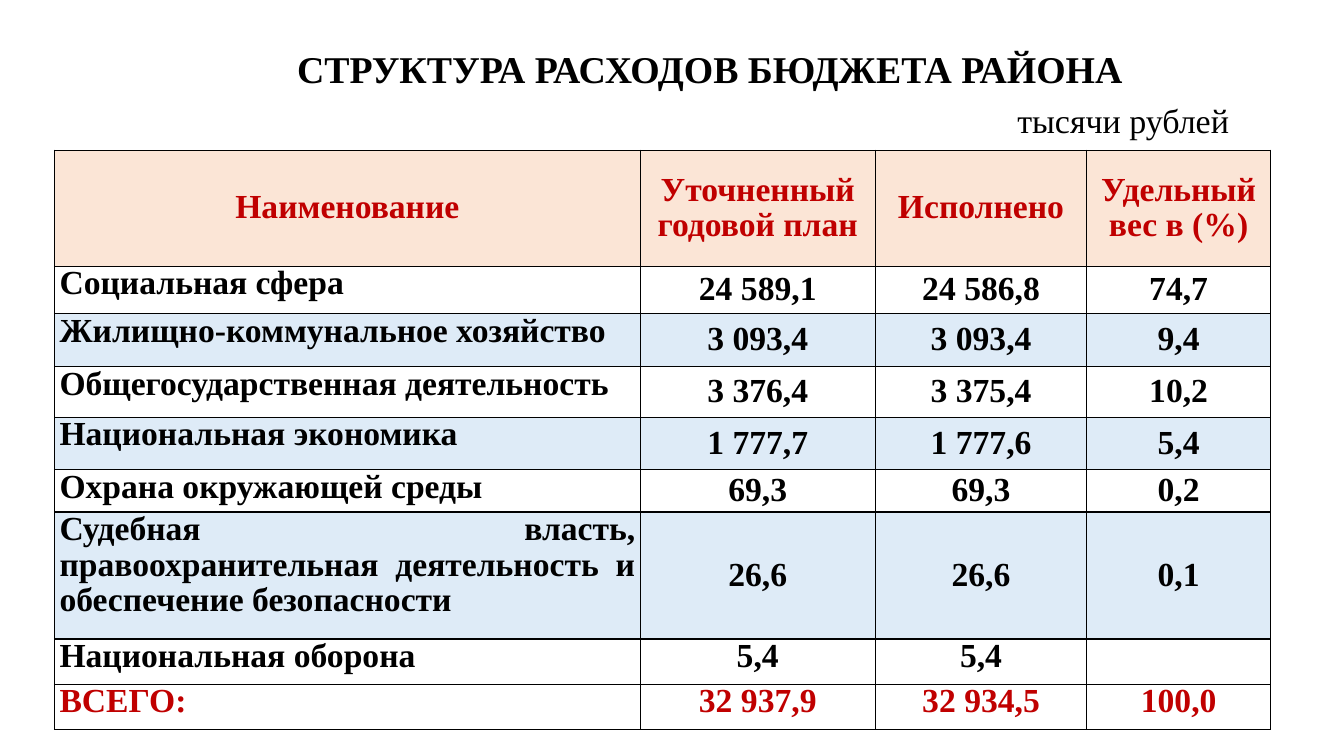
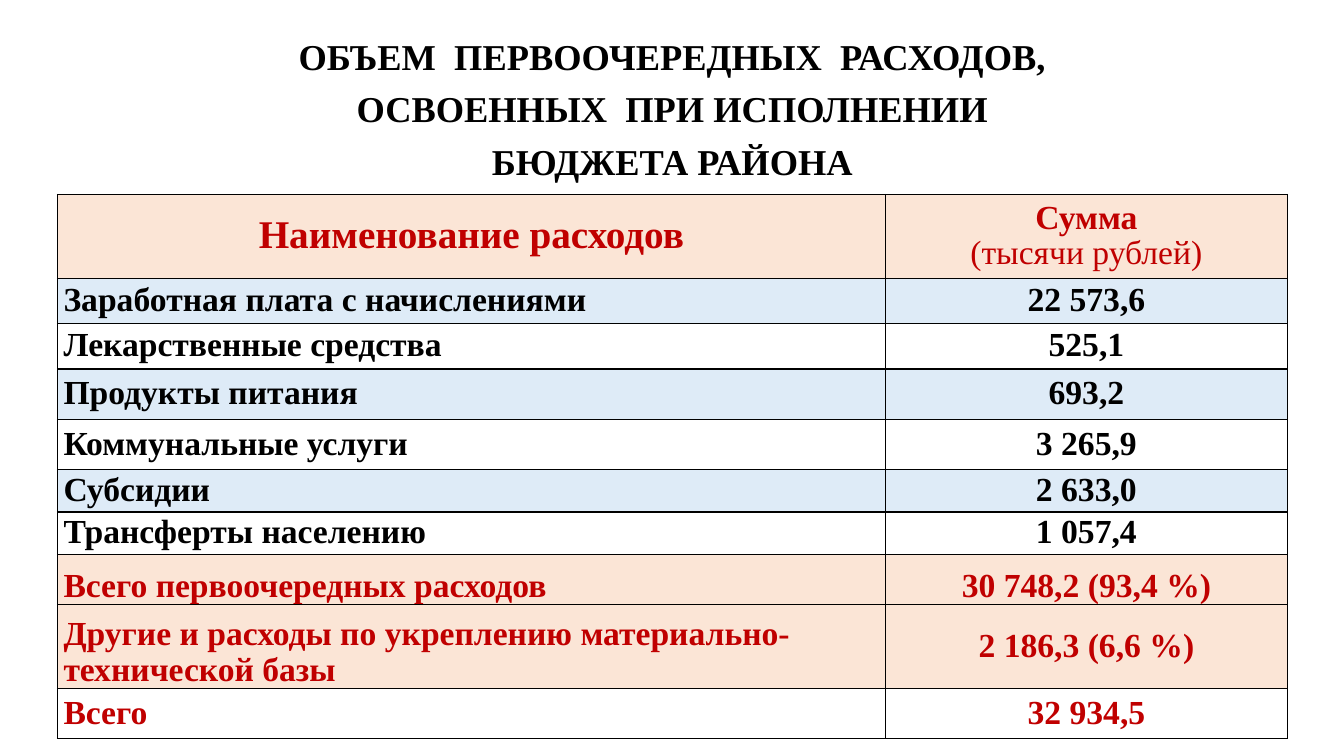
"""Build two slides on the spending of a district budget."""
from lxml.etree import SubElement
from pptx import Presentation
from pptx.dml.color import RGBColor
from pptx.enum.text import MSO_ANCHOR as Anchor, MSO_AUTO_SIZE as AutoSize, PP_ALIGN as Align
from pptx.oxml.ns import qn
from pptx.util import Inches, Pt

FONT = "Times New Roman"
BLACK = RGBColor(0x00, 0x00, 0x00)
RED = RGBColor(0xC0, 0x00, 0x00)
WHITE = RGBColor(0xFF, 0xFF, 0xFF)
PEACH = RGBColor(0xFB, 0xE5, 0xD6)
BLUE = RGBColor(0xDE, 0xEB, 0xF7)
TITLE_ONLY = 5
TOP, MIDDLE, BOTTOM = Anchor.TOP, Anchor.MIDDLE, Anchor.BOTTOM

STRUCTURE_HEADER = ["Наименование", "Уточненный годовой план", "Исполнено", "Удельный вес в (%)"]
STRUCTURE_ROWS = [
    (0.47, ["Социальная сфера", "24 589,1", "24 586,8", "74,7"]),
    (0.53, ["Жилищно-коммунальное хозяйство", "3 093,4", "3 093,4", "9,4"]),
    (0.5, ["Общегосударственная деятельность", "3 376,4", "3 375,4", "10,2"]),
    (0.52, ["Национальная экономика", "1 777,7", "1 777,6", "5,4"]),
    (0.42, ["Охрана окружающей среды", "69,3", "69,3", "0,2"]),
    (1.26, ["Судебная власть, правоохранительная деятельность и обеспечение безопасности",
            "26,6", "26,6", "0,1"]),
]
DEFENCE = ["Национальная оборона", "5,4", "5,4", ""]
STRUCTURE_TOTAL = ["ВСЕГО:", "32 937,9", "32 934,5", "100,0"]

PRIORITY_ROWS = [
    (0.45, ["Заработная плата с начислениями", "22 573,6"]),
    (0.45, ["Лекарственные средства", "525,1"]),
    (0.5, ["Продукты питания", "693,2"]),
    (0.5, ["Коммунальные услуги", "3 265,9"]),
    (0.42, ["Субсидии", "2 633,0"]),
    (0.42, ["Трансферты населению", "1 057,4"]),
]
PRIORITY_TOTAL = ["Всего первоочередных расходов", "30 748,2 (93,4 %)"]
OTHER_SPENDING = ["Другие и расходы по укреплению материально-технической базы", "2 186,3 (6,6 %)"]
GRAND_TOTAL = ["Всего", "32 934,5"]


def write_text(para, text, *, size=24, bold=True, color=BLACK, align=Align.CENTER,
               spacing=0.96, before=0):
    """Fill a paragraph with text in one format."""
    para.text = text
    para.alignment = align
    para.line_spacing = spacing
    para.space_before = Pt(before)
    for font in [para.font, *(span.font for span in para.runs)]:
        font.name = FONT
        font.size = Pt(size)
        font.bold = bold
        font.italic = False
        font.color.rgb = color


def add_page(deck, left, top, width, height):
    """Add a page and return it with its placed title frame."""
    page = deck.slides.add_slide(deck.slide_layouts[TITLE_ONLY])
    title = page.shapes.title
    title.left, title.top = Inches(left), Inches(top)
    title.width, title.height = Inches(width), Inches(height)
    frame = title.text_frame
    frame.word_wrap = True
    frame.auto_size = AutoSize.NONE
    frame.vertical_anchor = MIDDLE
    return page, frame


def add_grid(page, left, top, widths, heights):
    """Add an unfilled table with the given column widths and row heights."""
    grid = page.shapes.add_table(len(heights), len(widths), Inches(left), Inches(top),
                                 Inches(sum(widths)), Inches(sum(heights))).table
    for column, width in zip(grid.columns, widths):
        column.width = Inches(width)
    for row, height in zip(grid.rows, heights):
        row.height = Inches(height)
    return grid


def add_borders(cell):
    """Draw a thin black line on each side of a cell."""
    properties = cell._tc.get_or_add_tcPr()
    for side in ("a:lnL", "a:lnR", "a:lnT", "a:lnB"):
        line = SubElement(properties, qn(side), w=str(Pt(1)))
        fill = SubElement(line, qn("a:solidFill"))
        SubElement(fill, qn("a:srgbClr"), val=str(BLACK))


def fill_row(row, texts, *, fill, color=BLACK, inset=0.05, name_align=Align.CENTER,
             name_anchor=MIDDLE, value_anchor=MIDDLE):
    """Fill a table row whose first cell is a name and the rest are values."""
    for index, (cell, text) in enumerate(zip(row.cells, texts)):
        cell.margin_left = cell.margin_right = Inches(inset)
        cell.margin_top = cell.margin_bottom = 0
        cell.vertical_anchor = value_anchor if index else name_anchor
        add_borders(cell)
        cell.fill.solid()
        cell.fill.fore_color.rgb = fill
        write_text(cell.text_frame.paragraphs[0], text, color=color,
                   align=Align.CENTER if index else name_align)


def add_structure_page(deck):
    """Add the page on the structure of spending."""
    page, frame = add_page(deck, 1.11, 0.29, 11.5, 1.2)
    frame.margin_left, frame.margin_right = Inches(0.78), Inches(0.42)
    frame.margin_top = Inches(0.17)
    write_text(frame.paragraphs[0], "СТРУКТУРА РАСХОДОВ БЮДЖЕТА РАЙОНА", size=27, spacing=0.9)
    write_text(frame.add_paragraph(), "тысячи рублей", size=24.3, bold=False,
               align=Align.RIGHT, spacing=0.9, before=9)

    heights = [1.15, *(height for height, _ in STRUCTURE_ROWS), 0.45, 0.45]
    grid = add_grid(page, 0.54, 1.49, [5.81, 2.33, 2.1, 1.82], heights)
    header, *body, defence, total = grid.rows
    fill_row(header, STRUCTURE_HEADER, fill=PEACH, color=RED)
    names = {"name_align": Align.JUSTIFY, "name_anchor": TOP}
    for index, (row, (_, texts)) in enumerate(zip(body, STRUCTURE_ROWS)):
        fill_row(row, texts, fill=BLUE if index % 2 else WHITE, **names)
    fill_row(defence, DEFENCE, fill=WHITE, value_anchor=TOP, **names)
    fill_row(total, STRUCTURE_TOTAL, fill=WHITE, color=RED, value_anchor=TOP, **names)


def add_priority_page(deck):
    """Add the page on priority spending."""
    page, frame = add_page(deck, 0.92, 0.42, 11.5, 1.22)
    write_text(frame.paragraphs[0],
               "ОБЪЕМ  ПЕРВООЧЕРЕДНЫХ  РАСХОДОВ,\vОСВОЕННЫХ  ПРИ ИСПОЛНЕНИИ\vБЮДЖЕТА РАЙОНА",
               size=26, spacing=1.2)

    heights = [0.83, *(height for height, _ in PRIORITY_ROWS), 0.5, 0.83, 0.5]
    grid = add_grid(page, 0.57, 1.93, [8.21, 3.99], heights)
    header, *body, priority, other, total = grid.rows
    fill_row(header, ["", "Сумма"], fill=PEACH, color=RED, inset=0.06)
    name, amount = (cell.text_frame for cell in header.cells)
    write_text(name.paragraphs[0], "Наименование расходов", size=28, color=RED)
    write_text(amount.add_paragraph(), "(тысячи рублей)", bold=False, color=RED)
    names = {"name_align": Align.LEFT, "inset": 0.06}
    for index, (row, (_, texts)) in enumerate(zip(body, PRIORITY_ROWS)):
        fill_row(row, texts, fill=WHITE if index % 2 else BLUE, **names)
    fill_row(priority, PRIORITY_TOTAL, fill=PEACH, color=RED, name_anchor=BOTTOM,
             value_anchor=BOTTOM, **names)
    fill_row(other, OTHER_SPENDING, fill=PEACH, color=RED, name_anchor=BOTTOM, **names)
    fill_row(total, GRAND_TOTAL, fill=WHITE, color=RED, **names)


def main():
    """Build the deck and save it."""
    deck = Presentation()
    deck.slide_width, deck.slide_height = Inches(13.33), Inches(7.5)
    add_structure_page(deck)
    add_priority_page(deck)
    deck.save("out.pptx")


if __name__ == "__main__":
    main()
